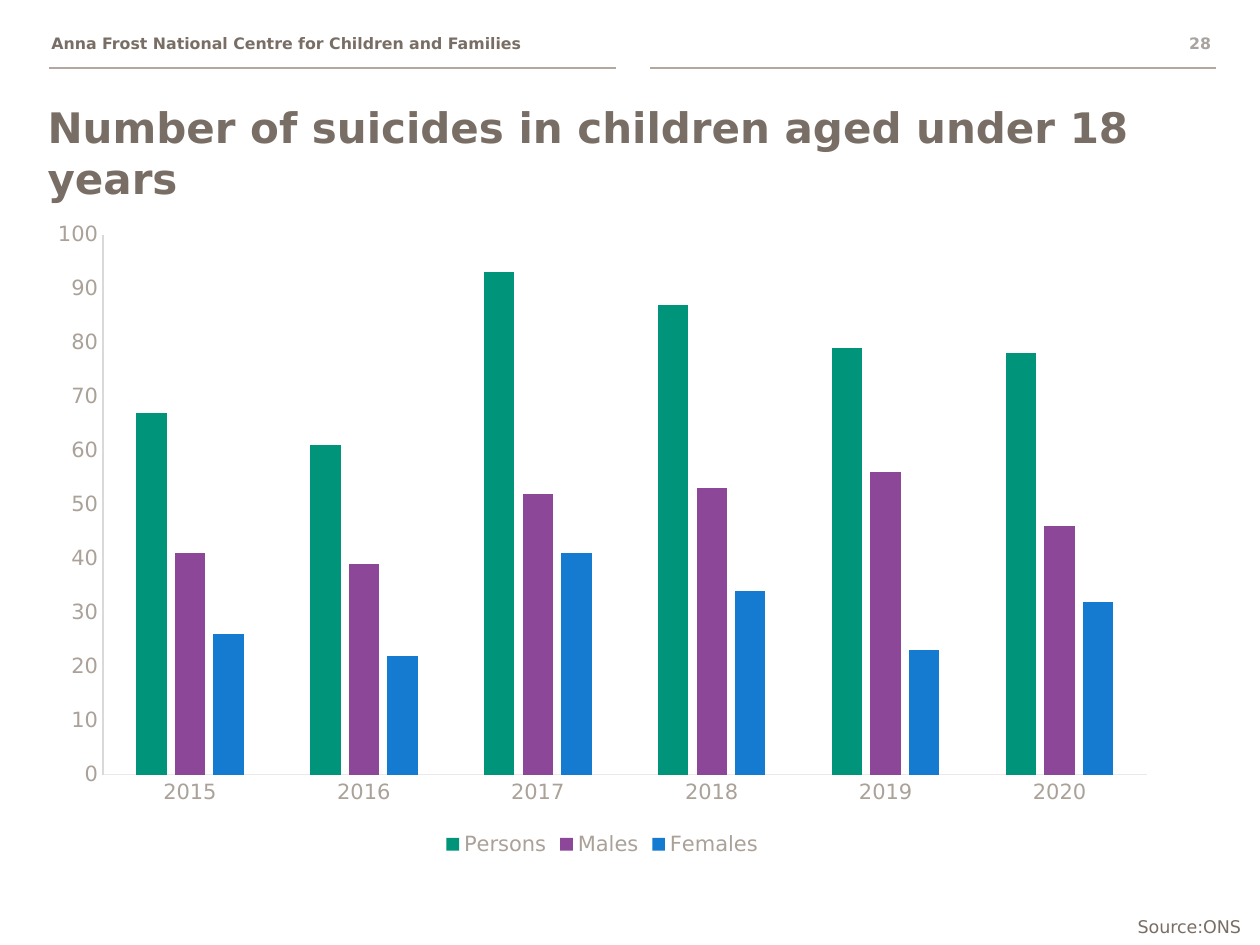
"""Build a slide with a clustered column chart of suicides in children by year."""
from lxml import etree
from pptx import Presentation
from pptx.chart.data import CategoryChartData
from pptx.dml.color import RGBColor
from pptx.enum.chart import XL_CHART_TYPE as CT, XL_LEGEND_POSITION as LP, XL_TICK_MARK as TM
from pptx.enum.shapes import MSO_CONNECTOR as MC
from pptx.enum.text import PP_ALIGN as AL
from pptx.oxml.ns import qn
from pptx.util import Inches, Pt

FONT = "DejaVu Sans"
BROWN = RGBColor(0x79, 0x6E, 0x65)
RULE = RGBColor(0xB0, 0xA8, 0xA1)
NUMBER = RGBColor(0xA8, 0xA3, 0x9F)
LABEL = RGBColor(0xAA, 0xA1, 0x99)
CAT_LINE = RGBColor(0xEB, 0xE9, 0xE7)
VAL_LINE = RGBColor(0xD9, 0xD9, 0xD9)
GREEN = RGBColor(0x00, 0x95, 0x7A)
PURPLE = RGBColor(0x8C, 0x47, 0x99)
BLUE = RGBColor(0x14, 0x7B, 0xD1)

prs = Presentation()
prs.slide_width, prs.slide_height = Inches(10), Inches(7.5)
s = prs.slides.add_slide(prs.slide_layouts[6])


def style(font, size, color, bold=False):
    font.name, font.size, font.bold = FONT, Pt(size), bold
    font.color.rgb = color


def add_text(text, x, y, w, h, size=9, color=BROWN, bold=True, align=AL.LEFT, wrap=True):
    tf = s.shapes.add_textbox(Inches(x), Inches(y), Inches(w), Inches(h)).text_frame
    tf.word_wrap = wrap
    p = tf.paragraphs[0]
    p.alignment = align
    r = p.add_run()
    r.text = text
    style(r.font, size, color, bold)


for x1, x2 in [(0.39, 4.89), (5.16, 9.65)]:
    line = s.shapes.add_connector(MC.STRAIGHT, Inches(x1), Inches(0.54), Inches(x2), Inches(0.54))
    line.line.color.rgb = RULE
    line.line.width = Pt(1)
    etree.SubElement(line._element.spPr, qn("a:effectLst"))

add_text("Anna Frost National Centre for Children and Families", 0.31, 0.22, 4.48, 0.25)
add_text("28", 9.13, 0.22, 0.58, 0.25, color=NUMBER, align=AL.RIGHT)
add_text("Number of suicides in children aged under 18 years", 0.28, 0.76, 9, 0.76, size=24)

series = [
    ("Persons", GREEN, (67, 61, 93, 87, 79, 78)),
    ("Males", PURPLE, (41, 39, 52, 53, 56, 46)),
    ("Females", BLUE, (26, 22, 41, 34, 23, 32)),
]
data = CategoryChartData(number_format="#,##0")
data.categories = [str(year) for year in range(2015, 2021)]
for name, color, values in series:
    data.add_series(name, values)

chart = s.shapes.add_chart(
    CT.COLUMN_CLUSTERED, Inches(0.28), Inches(1.66), Inches(9), Inches(5.18), data
).chart
style(chart.font, 10, BROWN)
chart.has_title = False
chart.has_legend = True
chart.legend.position = LP.BOTTOM
chart.legend.include_in_layout = False
style(chart.legend.font, 12, LABEL)

plot = chart.plots[0]
plot.gap_width, plot.overlap = 219, -27
plot.vary_by_categories = False
for ser, (name, color, values) in zip(plot.series, series):
    ser.format.fill.solid()
    ser.format.fill.fore_color.rgb = color

for axis, color in [(chart.category_axis, CAT_LINE), (chart.value_axis, VAL_LINE)]:
    axis.major_tick_mark = axis.minor_tick_mark = TM.NONE
    axis.has_major_gridlines = False
    axis.format.line.color.rgb = color
    axis.format.line.width = Pt(0.75)
    style(axis.tick_labels.font, 12, LABEL)
val = chart.value_axis
val.minimum_scale, val.maximum_scale, val.major_unit = 0, 100, 10
val.tick_labels.number_format = "#,##0"
val.tick_labels.number_format_is_linked = False

add_text("Source:ONS", 8.93, 7.22, 1.07, 0.27, size=10, bold=False, wrap=False)

prs.save("out.pptx")
